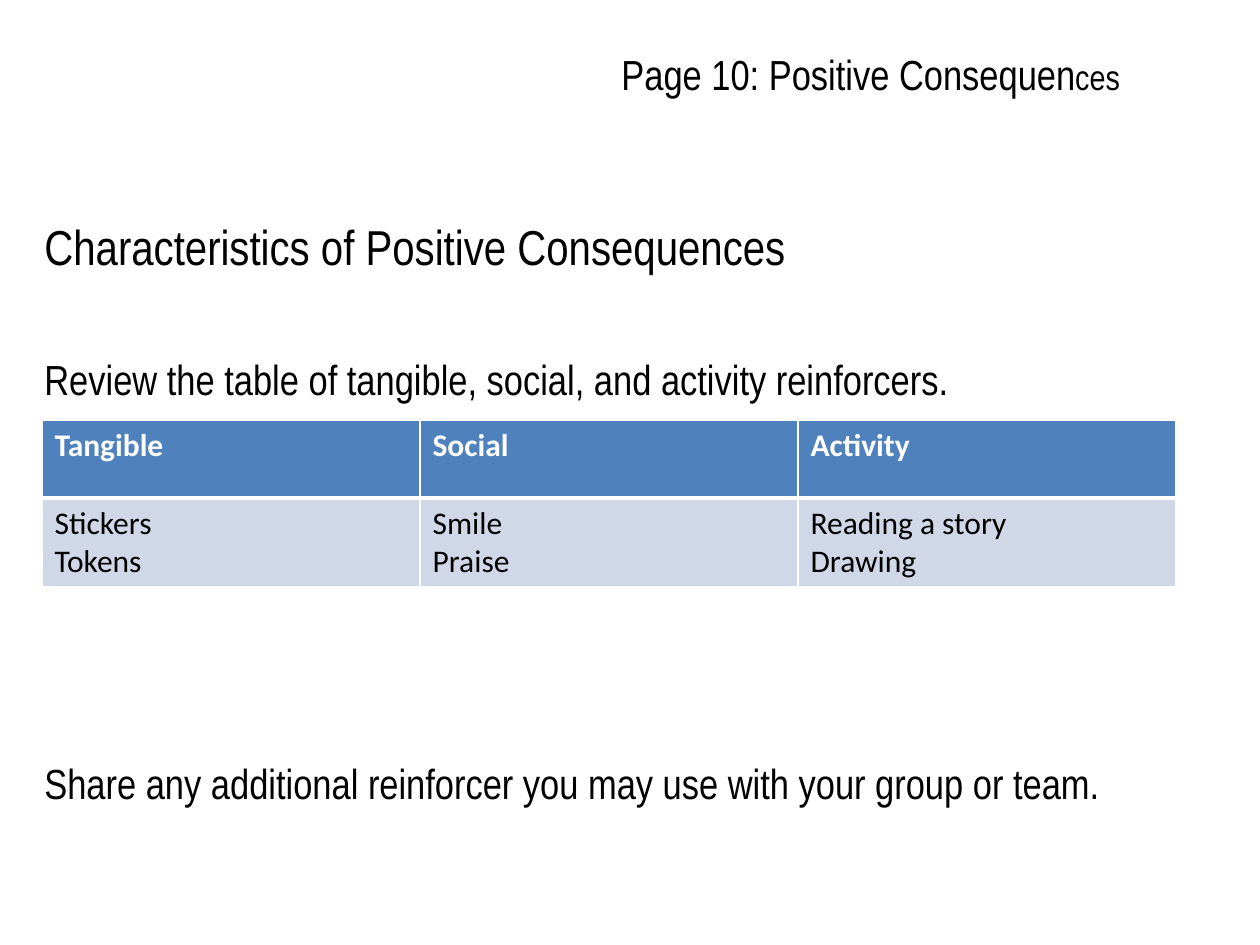
from lxml.etree import SubElement
from pptx import Presentation
from pptx.dml.color import RGBColor
from pptx.enum.text import MSO_ANCHOR as Anchor
from pptx.oxml.ns import qn
from pptx.util import Emu, Pt

PX = 914400 / 126
BLACK = RGBColor(0x00, 0x00, 0x00)
WHITE = RGBColor(0xFF, 0xFF, 0xFF)
HEADER_BLUE = RGBColor(0x4F, 0x81, 0xBD)
BODY_BLUE = RGBColor(0xD0, 0xD8, 0xE8)
HEADING_FONT = "Arial Narrow"
TABLE_FONT = "Calibri"

REINFORCERS = {
    "Tangible": ["Stickers", "Tokens"],
    "Social": ["Smile", "Praise"],
    "Activity": ["Reading a story", "Drawing"],
}


def px(length):
    """Turn a length in px into EMU."""
    return Emu(round(length * PX))


def add_run(paragraph, text, size, font_name, color=BLACK, bold=False):
    """Add one formatted run to a paragraph."""
    run = paragraph.add_run()
    run.text = text
    run.font.size = Pt(size)
    run.font.name = font_name
    run.font.bold = bold
    run.font.color.rgb = color


def add_text_frame(slide, box, anchor):
    """Add a wrapping text box and return its text frame."""
    frame = slide.shapes.add_textbox(*map(px, box)).text_frame
    frame.word_wrap = True
    frame.vertical_anchor = anchor
    return frame


def add_page_title(slide, box):
    """Place the page title, whose last letters are smaller."""
    paragraph = add_text_frame(slide, box, Anchor.BOTTOM).paragraphs[0]
    add_run(paragraph, "Page 10: Positive Consequen", 24, HEADING_FONT)
    add_run(paragraph, "ces", 20, HEADING_FONT)


def add_instructions(slide, box):
    """Place the heading and the two instructions around the table."""
    frame = add_text_frame(slide, box, Anchor.TOP)
    lines = [
        ("Characteristics of Positive Consequences", 28, 0),
        ("Review the table of tangible, social, and activity reinforcers.", 24, 45),
        ("Share any additional reinforcer you may use with your group or team.", 24, 202),
    ]
    for index, (text, size, space_before) in enumerate(lines):
        paragraph = frame.add_paragraph() if index else frame.paragraphs[0]
        paragraph.space_before = Pt(space_before)
        add_run(paragraph, text, size, HEADING_FONT)


def add_borders(cell, top, bottom):
    """Give a cell white borders, with top and bottom widths in points."""
    properties = cell._tc.get_or_add_tcPr()
    for side, width in (("L", 1), ("R", 1), ("T", top), ("B", bottom)):
        line = SubElement(properties, qn(f"a:ln{side}"), w=str(Pt(width)))
        fill = SubElement(line, qn("a:solidFill"))
        SubElement(fill, qn("a:srgbClr"), val=str(WHITE))


def fill_cell(cell, lines, fill_color, text_color, bold, top, bottom):
    """Write the lines of a cell and style it."""
    add_borders(cell, top, bottom)
    cell.fill.solid()
    cell.fill.fore_color.rgb = fill_color
    for index, text in enumerate(lines):
        frame = cell.text_frame
        paragraph = frame.add_paragraph() if index else frame.paragraphs[0]
        add_run(paragraph, text, 18, TABLE_FONT, text_color, bold)


def add_reinforcer_table(slide, box):
    """Place the table of reinforcers, one column for each kind."""
    left, top, width, height = box
    count = len(REINFORCERS)
    table = slide.shapes.add_table(2, count, *map(px, box)).table
    header_height = 78
    table.rows[0].height = px(header_height)
    table.rows[1].height = px(height - header_height)
    for index, (kind, examples) in enumerate(REINFORCERS.items()):
        table.columns[index].width = px(width // count)
        fill_cell(table.cell(0, index), [kind], HEADER_BLUE, WHITE, True, 1, 3)
        fill_cell(table.cell(1, index), examples, BODY_BLUE, BLACK, False, 3, 1)


def main():
    """Build the slide and save it."""
    presentation = Presentation()
    presentation.slide_width = px(1260)
    presentation.slide_height = px(945)
    slide = presentation.slides.add_slide(presentation.slide_layouts[6])
    add_instructions(slide, (32, 210, 1113, 614))
    add_reinforcer_table(slide, (42, 420, 1134, 166))
    add_page_title(slide, (609, 42, 536, 63))
    presentation.save("out.pptx")


if __name__ == "__main__":
    main()
